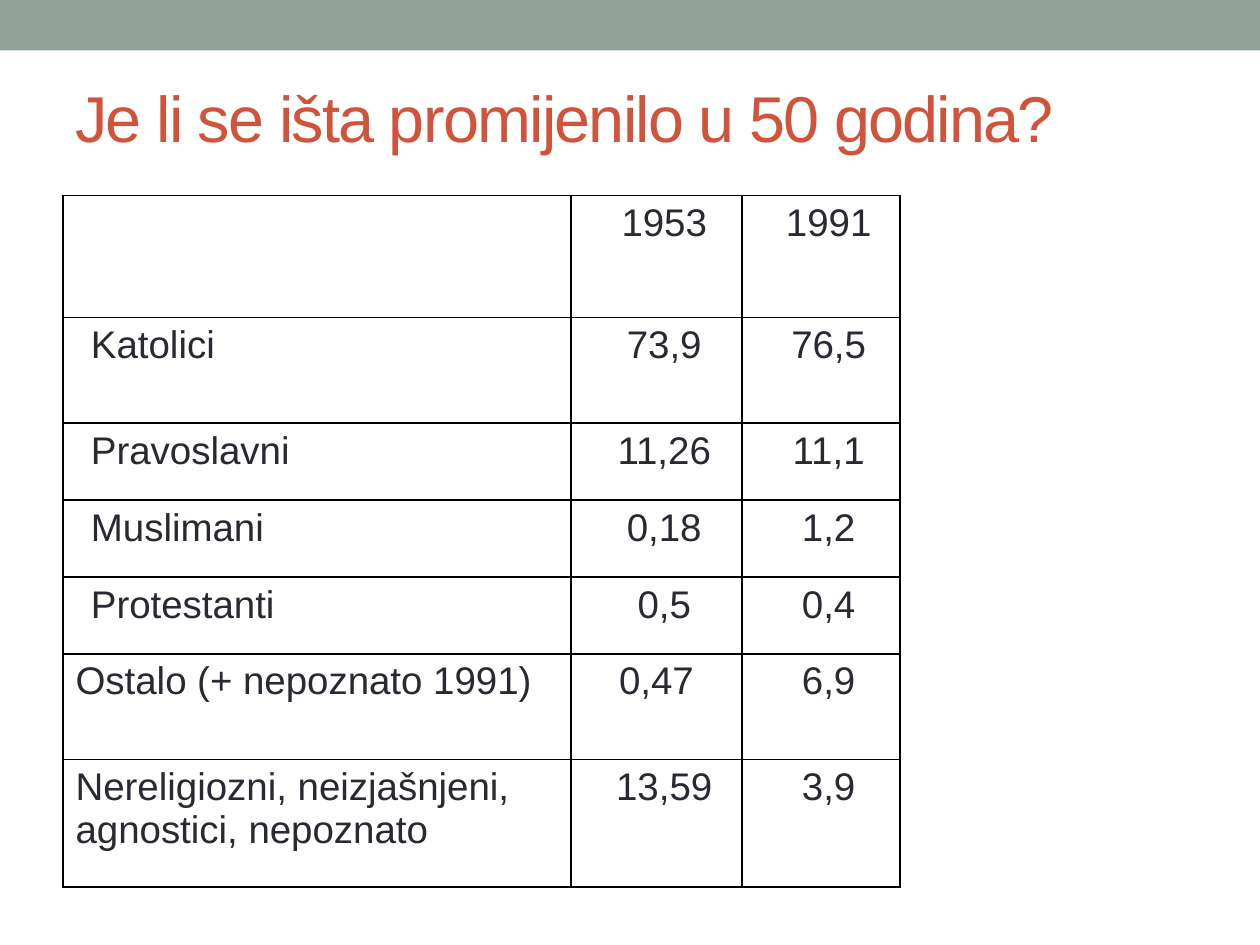
from dataclasses import dataclass

import pptx
import pptx.dml.color
import pptx.enum.shapes
import pptx.enum.text
import pptx.oxml.ns
import pptx.util
from lxml import etree
from pptx.util import Cm, Pt

FONT = "Arial"
TEXT_COLOR = "292934"
COLUMN_WIDTHS = (10.24, 3.45, 3.18)


@dataclass(frozen=True)
class Row:
    label: str
    year_1953: str
    year_1991: str
    height: float
    label_indented: bool = True
    first_value_indented: bool = True


ROWS = (
    Row("", "1953", "1991", 2.46),
    Row("Katolici", "73,9", "76,5", 2.13),
    Row("Pravoslavni", "11,26", "11,1", 1.55),
    Row("Muslimani", "0,18", "1,2", 1.55),
    Row("Protestanti", "0,5", "0,4", 1.55),
    Row("Ostalo (+ nepoznato 1991)", "0,47", "6,9", 2.13, False, False),
    Row("Nereligiozni, neizjašnjeni, agnostici, nepoznato", "13,59", "3,9", 2.57, False),
)


def color(hex_value: str) -> pptx.dml.color.RGBColor:
    return pptx.dml.color.RGBColor.from_string(hex_value)


def set_font(paragraph, size: float, hex_value: str) -> None:
    paragraph.font.name = FONT
    paragraph.font.size = Pt(size)
    paragraph.font.color.rgb = color(hex_value)


def add_band(slide) -> None:
    band = slide.shapes.add_shape(
        pptx.enum.shapes.MSO_SHAPE.RECTANGLE, Cm(0), Cm(0), Cm(25.4), Cm(1.02)
    )
    band.shadow.inherit = False
    band.fill.solid()
    band.fill.fore_color.rgb = color("93A299")
    band.line.fill.background()


def add_title(slide, text: str) -> None:
    title = slide.shapes.add_textbox(Cm(1.27), Cm(0.76), Cm(22.86), Cm(3.18))
    frame = title.text_frame
    frame.word_wrap = True
    frame.vertical_anchor = pptx.enum.text.MSO_ANCHOR.MIDDLE
    paragraph = frame.paragraphs[0]
    run = paragraph.add_run()
    run.text = text
    set_font(paragraph, 37, "D2533C")
    run.font._element.set("spc", "-100")


def add_borders(cell) -> None:
    """Draw a thin black line on all four sides, ahead of the cell fill."""
    properties = cell._tc.get_or_add_tcPr()
    qualified = pptx.oxml.ns.qn
    for position, side in enumerate(("lnL", "lnR", "lnT", "lnB")):
        line = etree.Element(qualified(f"a:{side}"), w=str(Pt(1)))
        fill = etree.SubElement(line, qualified("a:solidFill"))
        etree.SubElement(fill, qualified("a:srgbClr"), val="000000")
        properties.insert(position, line)


def fill_cell(cell, text: str, centered: bool, indented: bool) -> None:
    cell.fill.background()
    add_borders(cell)
    if not text:
        return
    cell.text = text
    paragraph = cell.text_frame.paragraphs[0]
    set_font(paragraph, 22, TEXT_COLOR)
    if centered:
        paragraph.alignment = pptx.enum.text.PP_ALIGN.CENTER
    if indented:
        properties = paragraph._p.get_or_add_pPr()
        properties.set("marL", str(Cm(1.02)))
        properties.set("indent", str(Cm(-0.71)))


def add_religion_table(slide) -> None:
    frame = slide.shapes.add_table(
        len(ROWS), len(COLUMN_WIDTHS), Cm(1.27), Cm(3.94),
        Cm(sum(COLUMN_WIDTHS)), Cm(sum(row.height for row in ROWS)),
    )
    table = frame.table
    table.first_row = False
    table.horz_banding = False
    for column, width in zip(table.columns, COLUMN_WIDTHS):
        column.width = Cm(width)
    for index, row in enumerate(ROWS):
        table.rows[index].height = Cm(row.height)
        fill_cell(table.cell(index, 0), row.label, False, row.label_indented)
        fill_cell(table.cell(index, 1), row.year_1953, True, row.first_value_indented)
        fill_cell(table.cell(index, 2), row.year_1991, True, True)


def main() -> None:
    presentation = pptx.Presentation()
    presentation.slide_width = Cm(25.4)
    presentation.slide_height = Cm(19.05)
    slide = presentation.slides.add_slide(presentation.slide_layouts[6])
    add_band(slide)
    add_title(slide, "Je li se išta promijenilo u 50 godina?")
    add_religion_table(slide)
    presentation.save("out.pptx")


if __name__ == "__main__":
    main()
